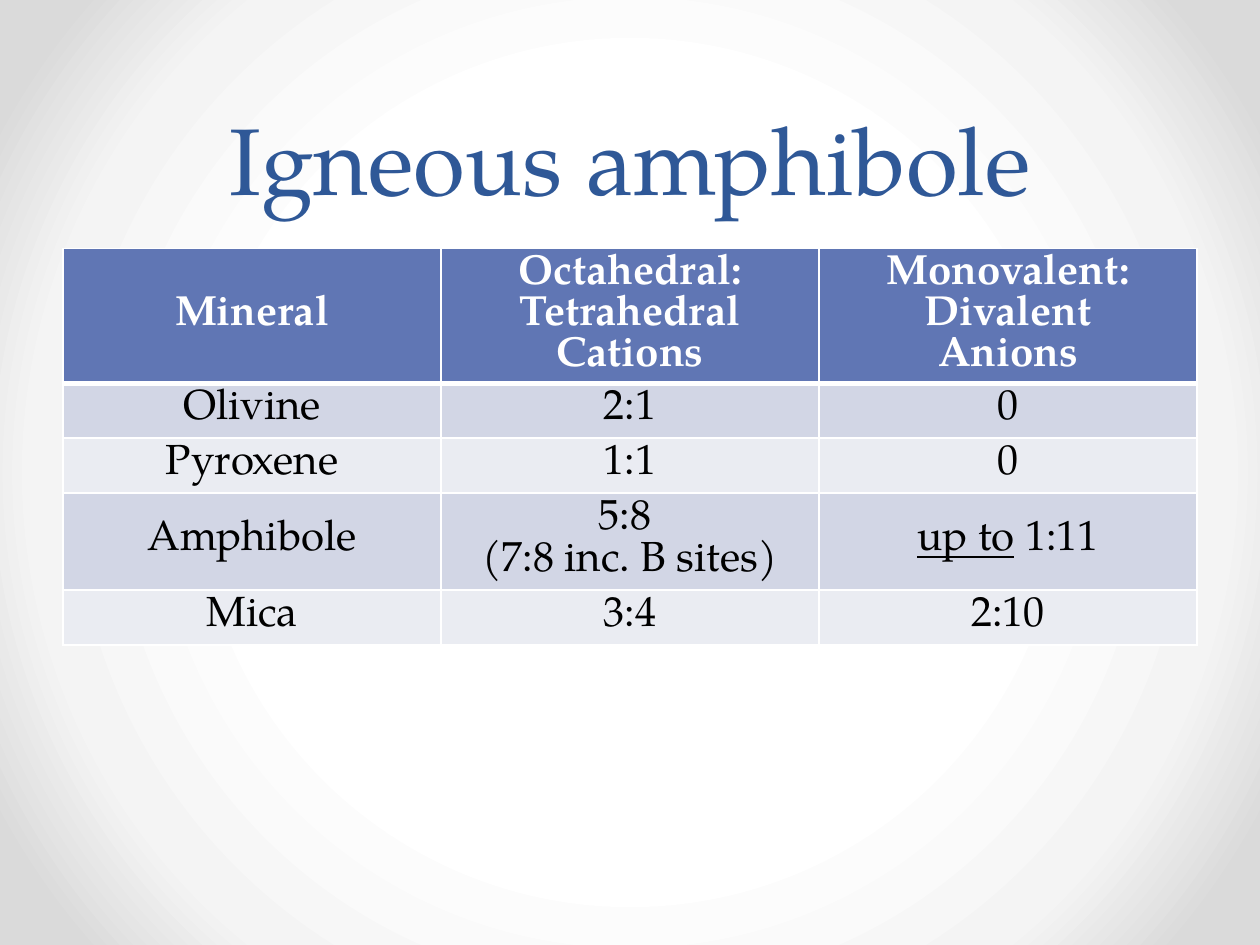
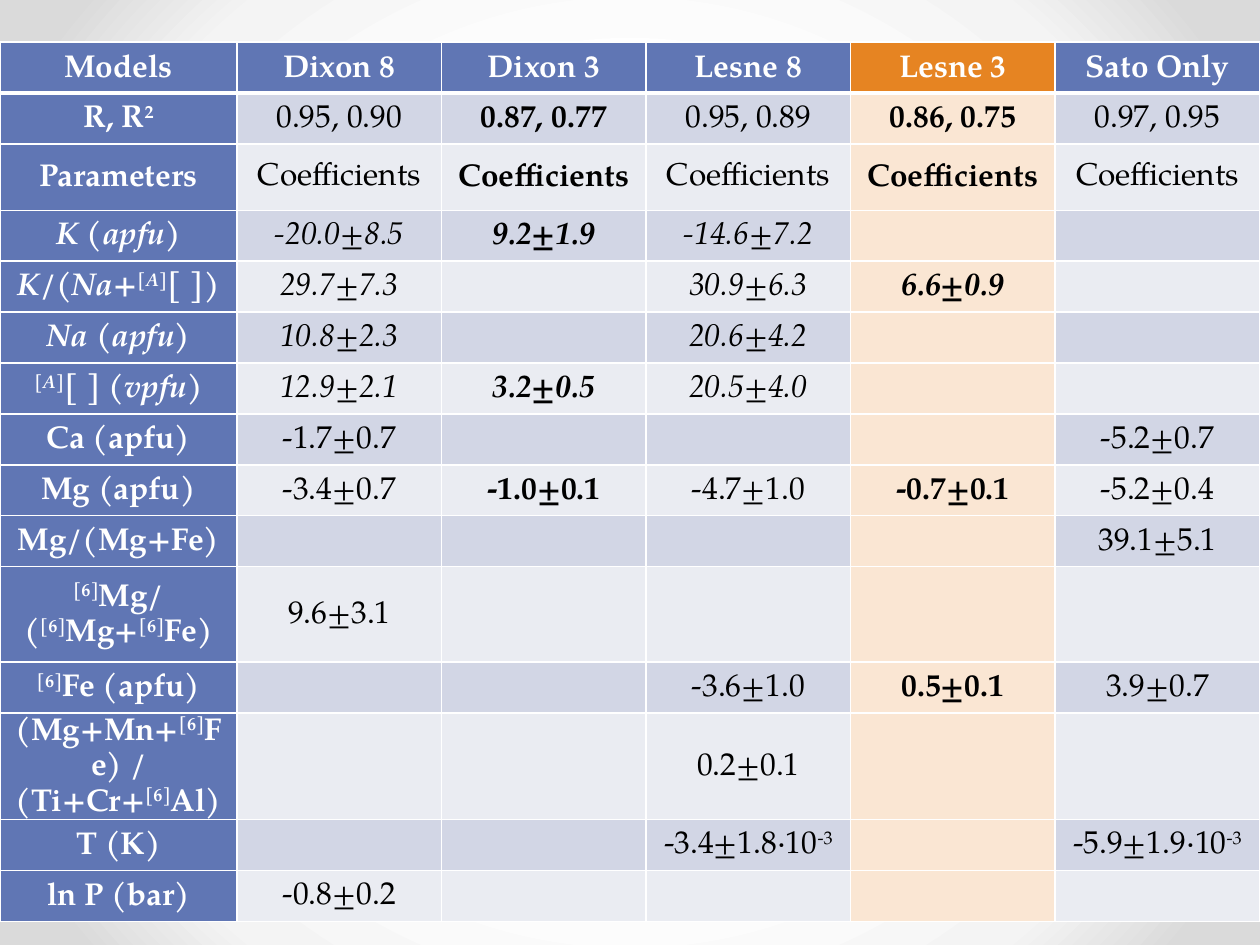
from lxml.etree import SubElement
from pptx import Presentation
from pptx.dml.color import RGBColor
from pptx.enum.text import MSO_ANCHOR, PP_ALIGN
from pptx.oxml.ns import qn
from pptx.util import Pt

FONT = "TeX Gyre Pagella"
WHITE, BLACK, TITLE_BLUE = "FFFFFF", "000000", "2F5897"
HEADER_BLUE, HEADER_ORANGE, PALE_ORANGE = "6076B4", "E68422", "FAE6D3"
BANDS = ["EAECF2", "D2D6E5"]
GRADIENT_STOPS = [(50000, WHITE), (76000, "F4F4F4"), (92000, "DADADA")]


def color(hex_string):
    return RGBColor.from_string(hex_string)


def write_text(text_frame, text, text_color, font_format, line_spacing, marked=None):
    for index, line in enumerate(text.split("\n")):
        paragraph = text_frame.paragraphs[0] if index == 0 else text_frame.add_paragraph()
        paragraph.alignment = PP_ALIGN.CENTER
        paragraph.line_spacing = Pt(line_spacing)
        for position, part in enumerate(line.split("|")):
            if not part:
                continue
            run = paragraph.add_run()
            run.text = part
            run.font.color.rgb = color(text_color)
            for name, value in font_format.items():
                setattr(run.font, name, value)
            if position % 2:
                run.font._element.set(*marked)


presentation = Presentation()
presentation.slide_width, presentation.slide_height = Pt(720), Pt(540)

master = presentation.slide_master
master.background.fill.gradient()
gradient = master.element.find(".//" + qn("a:gradFill"))
for child in list(gradient):
    gradient.remove(child)
stop_list = SubElement(gradient, qn("a:gsLst"))
for offset, stop_color in GRADIENT_STOPS:
    stop = SubElement(stop_list, qn("a:gs"), pos=str(offset))
    SubElement(stop, qn("a:srgbClr"), val=stop_color)
shade = SubElement(gradient, qn("a:path"), path="circle")
SubElement(shade, qn("a:fillToRect"), {side: "50000" for side in "ltrb"})

mineral_table = {
    "title": "Igneous amphibole",
    "left": 36, "top": 142, "widths": [216] * 3,
    "heights": [77, 31.4, 31.4, 55.4, 31.4],
    "size": 24, "line_spacing": 23.6, "margins": (7.2, 3),
    "marked": ("u", "sng"),
    "bold_columns": [], "label_columns": [], "highlight_columns": [], "italic_rows": [],
    "rows": [
        ["Mineral", "Octahedral:\nTetrahedral\nCations", "Monovalent:\nDivalent\nAnions"],
        ["Olivine", "2:1", "0"],
        ["Pyroxene", "1:1", "0"],
        ["Amphibole", "5:8 \n(7:8 inc. B sites)", "|up to| 1:11"],
        ["Mica", "3:4", "2:10"],
    ],
}

model_table = {
    "title": None,
    "left": 0, "top": 24, "widths": [135.5] + [116.9] * 5,
    "heights": [29.1, 29.1, 38] + [29.1] * 7 + [54.5, 29.1, 61, 29.1, 29.1],
    "size": 18, "line_spacing": 20.3, "margins": (5, 0),
    "marked": ("baseline", "30000"),
    "bold_columns": [0, 2, 4], "label_columns": [0], "highlight_columns": [4],
    "italic_rows": [3, 4, 5, 6],
    "rows": [
        ["Models", "Dixon 8", "Dixon 3", "Lesne 8", "Lesne 3", "Sato Only"],
        ["R, R|2|", "0.95, 0.90", "0.87, 0.77", "0.95, 0.89", "0.86, 0.75", "0.97, 0.95"],
        ["Parameters"] + ["Coefficients"] * 5,
        ["K (apfu)", "-20.0±8.5", "9.2±1.9", "-14.6±7.2", "", ""],
        ["K/(Na+|[A]|[ ])", "29.7±7.3", "", "30.9±6.3", "6.6±0.9", ""],
        ["Na (apfu)", "10.8±2.3", "", "20.6±4.2", "", ""],
        ["|[A]|[ ] (vpfu)", "12.9±2.1", "3.2±0.5", "20.5±4.0", "", ""],
        ["Ca (apfu)", "-1.7±0.7", "", "", "", "-5.2±0.7"],
        ["Mg (apfu)", "-3.4±0.7", "-1.0±0.1", "-4.7±1.0", "-0.7±0.1", "-5.2±0.4"],
        ["Mg/(Mg+Fe)", "", "", "", "", "39.1±5.1"],
        ["|[6]|Mg/\n(|[6]|Mg+|[6]|Fe)", "9.6±3.1", "", "", "", ""],
        ["|[6]|Fe (apfu)", "", "", "-3.6±1.0", "0.5±0.1", "3.9±0.7"],
        ["(Mg+Mn+|[6]|Fe) / (Ti+Cr+|[6]|Al)", "", "", "0.2±0.1", "", ""],
        ["T (K)", "", "", "-3.4±1.8·10|-3|", "", "-5.9±1.9·10|-3|"],
        ["ln P (bar)", "-0.8±0.2", "", "", "", ""],
    ],
}

for content in [mineral_table, model_table]:
    slide = presentation.slides.add_slide(presentation.slide_layouts[6])

    if content["title"]:
        title = slide.shapes.add_textbox(Pt(36), Pt(0), Pt(648), Pt(126)).text_frame
        title.word_wrap = True
        title.vertical_anchor = MSO_ANCHOR.BOTTOM
        write_text(title, content["title"], TITLE_BLUE, {"name": FONT, "size": Pt(54)}, 58)

    widths, heights = content["widths"], content["heights"]
    table = slide.shapes.add_table(
        len(heights), len(widths), Pt(content["left"]), Pt(content["top"]),
        Pt(sum(widths)), Pt(sum(heights))).table
    for column, width in zip(table.columns, widths):
        column.width = Pt(width)
    for row, height in zip(table.rows, heights):
        row.height = Pt(height)

    horizontal, vertical = content["margins"]
    cell_format = {
        "vertical_anchor": MSO_ANCHOR.MIDDLE,
        "margin_left": Pt(horizontal), "margin_right": Pt(horizontal),
        "margin_top": Pt(vertical), "margin_bottom": Pt(vertical),
    }

    for row_index, values in enumerate(content["rows"]):
        for column_index, value in enumerate(values):
            cell = table.cell(row_index, column_index)
            for name, setting in cell_format.items():
                setattr(cell, name, setting)

            is_header = row_index == 0
            is_label = is_header or column_index in content["label_columns"]
            is_highlight = column_index in content["highlight_columns"]
            if is_highlight:
                fill_color = HEADER_ORANGE if is_header else PALE_ORANGE
            else:
                fill_color = HEADER_BLUE if is_label else BANDS[row_index % 2]

            border_widths = {
                "a:lnL": 1, "a:lnR": 1,
                "a:lnT": 3 if row_index == 1 else 1,
                "a:lnB": 3 if is_header else 1,
            }
            properties = cell._tc.get_or_add_tcPr()
            for tag, border_width in border_widths.items():
                border = SubElement(properties, qn(tag), w=str(Pt(border_width)))
                border_fill = SubElement(border, qn("a:solidFill"))
                SubElement(border_fill, qn("a:srgbClr"), val=WHITE)
            cell.fill.solid()
            cell.fill.fore_color.rgb = color(fill_color)

            font_format = {
                "name": FONT, "size": Pt(content["size"]),
                "bold": is_header or column_index in content["bold_columns"],
                "italic": row_index in content["italic_rows"],
            }
            write_text(cell.text_frame, value, WHITE if is_label else BLACK,
                       font_format, content["line_spacing"], content["marked"])

presentation.save("out.pptx")
